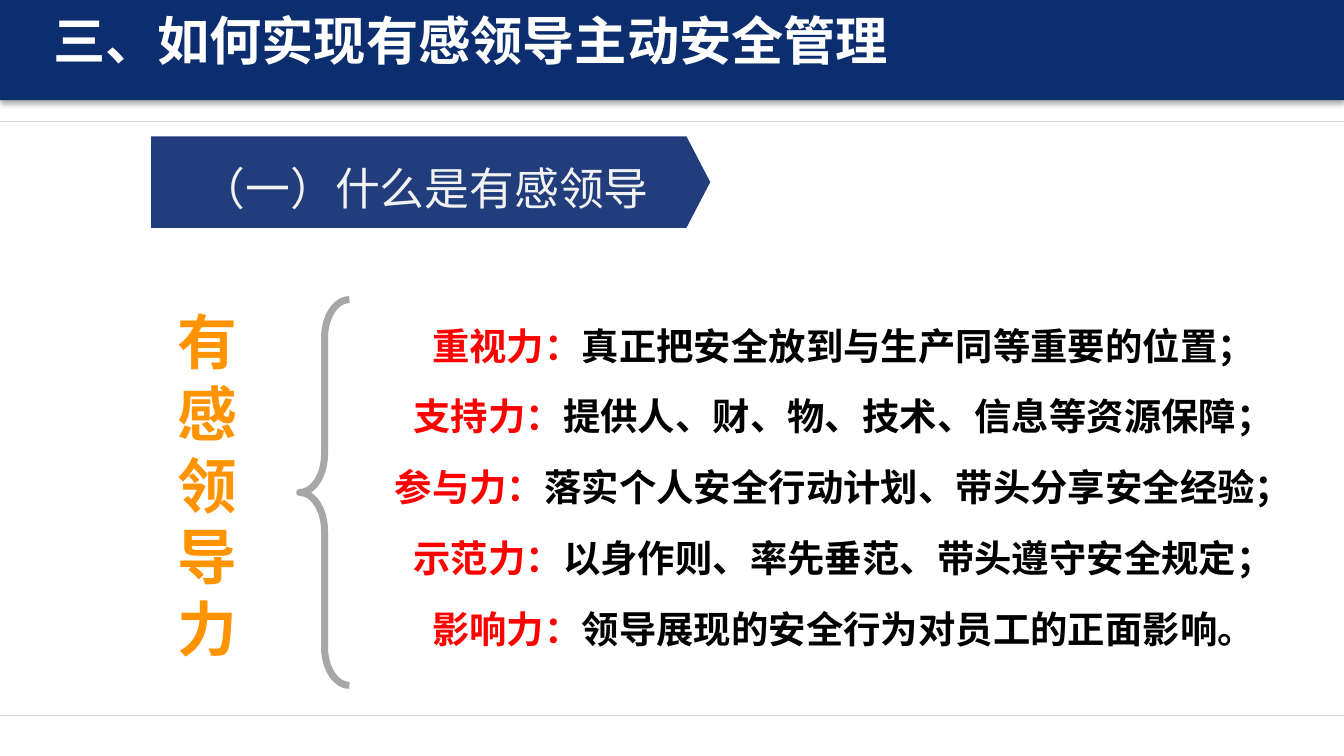
from dataclasses import dataclass
from typing import NamedTuple

from lxml.etree import SubElement
from pptx import Presentation
from pptx.dml.color import RGBColor
from pptx.enum.shapes import MSO_CONNECTOR as Connector, MSO_SHAPE as Preset
from pptx.enum.text import MSO_ANCHOR as Anchor, PP_ALIGN as Align
from pptx.oxml.ns import qn
from pptx.util import Emu, Pt

PX = 4572


class Area(NamedTuple):
    left: int
    top: int
    width: int
    height: int


class Insets(NamedTuple):
    left: int = 20
    top: int = 10
    right: int = 20
    bottom: int = 10


@dataclass(frozen=True)
class Theme:
    font: str = "Noto Sans CJK SC"
    white: str = "FFFFFF"
    navy: str = "0C2E6F"
    section: str = "223D7B"
    section_text: str = "F2F2F2"
    rule: str = "D9D9D9"
    brace: str = "A7A7A7"
    orange: str = "FF9300"
    red: str = "FF0000"
    black: str = "000000"
    title_size: int = 28
    section_size: int = 24
    body_size: int = 20
    column_size: int = 32


@dataclass(frozen=True)
class Style:
    size: int
    color: str
    bold: bool = True


@dataclass(frozen=True)
class Power:
    name: str
    meaning: str


THEME = Theme()
WIDTH, HEIGHT = 2000, 1125
RULE_TOPS = (181, 1064)
POWERS = (
    Power("重视力：", "真正把安全放到与生产同等重要的位置；"),
    Power("支持力：", "提供人、财、物、技术、信息等资源保障；"),
    Power("参与力：", "落实个人安全行动计划、带头分享安全经验；"),
    Power("示范力：", "以身作则、率先垂范、带头遵守安全规定；"),
    Power("影响力：", "领导展现的安全行为对员工的正面影响。"),
)


def px(value: int) -> Emu:
    return Emu(value * PX)


def rgb(color: str) -> RGBColor:
    return RGBColor.from_string(color)


def add_preset(page, preset: Preset, area: Area, fill: str | None = None):
    shape = page.shapes.add_shape(preset, *map(px, area))
    shape.shadow.inherit = False
    shape.line.fill.background()
    if fill:
        shape.fill.solid()
        shape.fill.fore_color.rgb = rgb(fill)
    else:
        shape.fill.background()
    return shape


def add_rule(page, top: int) -> None:
    rule = page.shapes.add_connector(Connector.STRAIGHT, 0, px(top), px(WIDTH), px(top))
    rule.line.color.rgb = rgb(THEME.rule)
    rule.line.width = Pt(0.25)
    SubElement(rule._element.spPr, qn("a:effectLst"))


def add_drop_shadow(shape) -> None:
    effects = shape._element.spPr.find(qn("a:effectLst"))
    shadow = SubElement(effects, qn("a:outerShdw"), blurRad=str(Pt(3)),
                        dist=str(Pt(1.8)), dir="5400000", rotWithShape="0")
    color = SubElement(shadow, qn("a:srgbClr"), val=THEME.black)
    SubElement(color, qn("a:alpha"), val="35000")


def set_frame(shape, insets: Insets, anchor: Anchor):
    frame = shape.text_frame
    frame.word_wrap = True
    frame.vertical_anchor = anchor
    frame.margin_left, frame.margin_top, frame.margin_right, frame.margin_bottom = map(px, insets)
    return frame


def add_box(page, area: Area, insets: Insets, anchor: Anchor):
    return set_frame(page.shapes.add_textbox(*map(px, area)), insets, anchor)


def add_span(para, text: str, style: Style) -> None:
    span = para.add_run()
    span.text = text
    span.font.size = Pt(style.size)
    span.font.bold = style.bold
    span.font.color.rgb = rgb(style.color)
    span.font.name = THEME.font
    SubElement(span.font._element, qn("a:ea"), typeface=THEME.font)


def add_para(frame, index: int, align: Align, pitch: float | None = None):
    para = frame.add_paragraph() if index else frame.paragraphs[0]
    para.alignment = align
    if pitch:
        para.line_spacing = Pt(pitch)
    return para


def draw_header(page) -> None:
    banner = add_preset(page, Preset.RECTANGLE, Area(0, -10, WIDTH, 159), THEME.navy)
    add_drop_shadow(banner)
    title = add_box(page, Area(79, 12, 1708, 94), Insets(0, 0, 0, 0), Anchor.MIDDLE)
    add_span(add_para(title, 0, Align.LEFT), "三、如何实现有感领导主动安全管理",
             Style(THEME.title_size, THEME.white))


def draw_section(page) -> None:
    label = add_preset(page, Preset.PENTAGON, Area(225, 203, 832, 136), THEME.section)
    label.adjustments[0] = 0.26
    frame = set_frame(label, Insets(), Anchor.MIDDLE)
    add_span(add_para(frame, 0, Align.CENTER, 35), "（一）什么是有感领导",
             Style(THEME.section_size, THEME.section_text, bold=False))


def draw_powers(page) -> None:
    frame = add_box(page, Area(546, 280, 1419, 856), Insets(), Anchor.MIDDLE)
    for index, power in enumerate(POWERS):
        para = add_para(frame, index, Align.CENTER, 36)
        para.space_before = Pt(2)
        add_span(para, power.name, Style(THEME.body_size, THEME.red))
        add_span(para, power.meaning, Style(THEME.body_size, THEME.black))


def draw_column(page) -> None:
    frame = add_box(page, Area(246, 446, 134, 556), Insets(18, 8, 18, 8), Anchor.TOP)
    for index, text in enumerate(("有感领", "导", "力")):
        para = add_para(frame, index, Align.LEFT, 38.4)
        add_span(para, text, Style(THEME.column_size, THEME.orange))


def draw_brace(page) -> None:
    brace = add_preset(page, Preset.LEFT_BRACE, Area(446, 446, 74, 574))
    brace.adjustments[0] = 0.77
    brace.adjustments[1] = 0.5
    brace.line.color.rgb = rgb(THEME.brace)
    brace.line.width = Pt(3.75)


def main() -> None:
    deck = Presentation()
    deck.slide_width, deck.slide_height = px(WIDTH), px(HEIGHT)
    page = deck.slides.add_slide(deck.slide_layouts[6])
    add_preset(page, Preset.RECTANGLE, Area(0, 1064, WIDTH, 61), THEME.white)
    for top in RULE_TOPS:
        add_rule(page, top)
    draw_header(page)
    draw_section(page)
    draw_powers(page)
    draw_column(page)
    draw_brace(page)
    deck.save("out.pptx")


if __name__ == "__main__":
    main()
